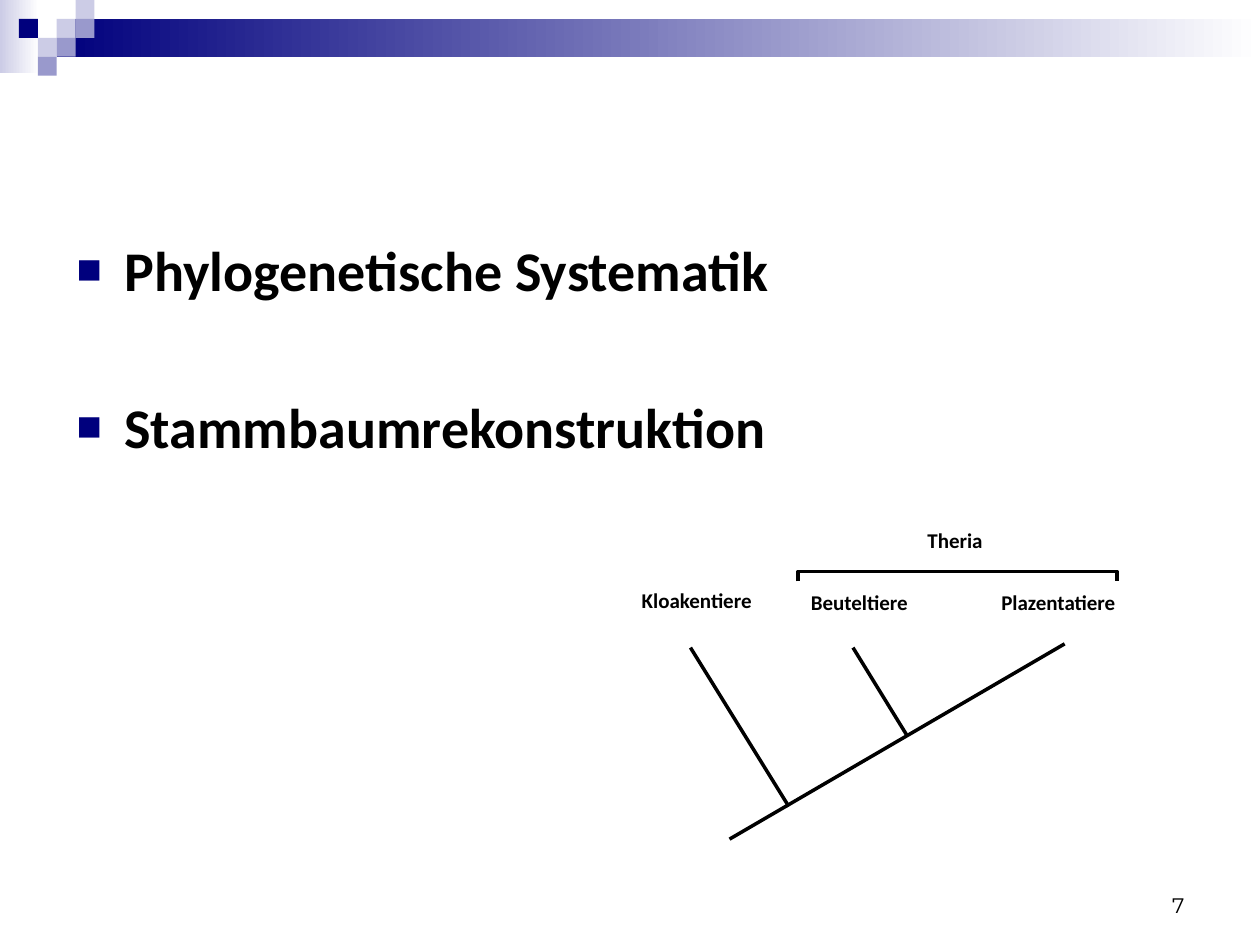
from dataclasses import dataclass

from lxml.etree import SubElement
from pptx import Presentation
from pptx.dml.color import RGBColor as Rgb
from pptx.enum.shapes import MSO_CONNECTOR as Conn, MSO_SHAPE as Shape
from pptx.enum.text import MSO_ANCHOR as Anchor, PP_ALIGN as Align
from pptx.oxml.ns import qn
from pptx.util import Inches, Pt


@dataclass(frozen=True)
class Theme:
    navy: Rgb = Rgb.from_string("00007D")
    mid: Rgb = Rgb.from_string("9999CC")
    pale: Rgb = Rgb.from_string("CCCCE6")
    white: Rgb = Rgb.from_string("FFFFFF")
    black: Rgb = Rgb.from_string("000000")
    font: str = "Calibri"
    num_font: str = "Montserrat"
    head: int = 32
    small: int = 12
    line: int = 2


THEME = Theme()
TILE = 0.15


def add_rect(slide, box, color, fade=False):
    """Add a borderless rectangle, solid or fading to white on the right."""
    rect = slide.shapes.add_shape(Shape.RECTANGLE, *map(Inches, box))
    rect.shadow.inherit = False
    rect.line.fill.background()
    if fade:
        rect.fill.gradient()
        rect.fill.gradient_angle = 0
        for stop, tone, place in zip(rect.fill.gradient_stops,
                                     (color, THEME.white), (0, 1)):
            stop.color.rgb = tone
            stop.position = place
    else:
        rect.fill.solid()
        rect.fill.fore_color.rgb = color


def add_banner(slide):
    add_rect(slide, (0, 0, 0.31, 0.58), THEME.pale, fade=True)
    add_rect(slide, (0.45, 0.15, 9.55, 0.3), THEME.navy, fade=True)
    tiles = [(3, 1, THEME.pale), (4, 0, THEME.pale), (4, 1, THEME.mid),
             (2, 2, THEME.pale), (1, 1, THEME.navy), (3, 2, THEME.mid),
             (2, 3, THEME.mid)]
    for col, row, color in tiles:
        add_rect(slide, (col * TILE, row * TILE, TILE, TILE), color)


def style(para, size, font=THEME.font, bold=True):
    for run in para.runs:
        run.font.name = font
        run.font.size = Pt(size)
        run.font.bold = bold
        run.font.color.rgb = THEME.black


def add_frame(slide, box):
    frame = slide.shapes.add_textbox(*map(Inches, box)).text_frame
    frame.word_wrap = True
    return frame


def add_bullet(para):
    props = para._p.get_or_add_pPr()
    props.set("marL", str(Inches(0.38)))
    props.set("indent", str(-Inches(0.38)))
    color = SubElement(props, qn("a:buClr"))
    SubElement(color, qn("a:srgbClr"), val=str(THEME.navy))
    SubElement(props, qn("a:buSzPct"), val="75000")
    SubElement(props, qn("a:buFont"), typeface="Arial")
    SubElement(props, qn("a:buChar"), char="■")


def add_topics(slide, topics):
    frame = add_frame(slide, (0.51, 1.31, 7.09, 2.99))
    frame.margin_top = Inches(0.56)
    frame.text = "\n".join(topics)
    for i, para in enumerate(frame.paragraphs):
        para.space_before = Pt(51 if i else 0)
        add_bullet(para)
        style(para, THEME.head)


def add_label(slide, text, left, top, height=0.62):
    frame = add_frame(slide, (left, top, 1.54, height))
    frame.text = text
    para = frame.paragraphs[0]
    para.alignment = Align.CENTER
    para.space_after = Pt(10)
    style(para, THEME.small)


def add_branch(slide, ends):
    branch = slide.shapes.add_connector(Conn.STRAIGHT, *map(Inches, ends))
    branch.line.color.rgb = THEME.black
    branch.line.width = Pt(THEME.line)
    SubElement(branch._element.spPr, qn("a:effectLst"))


def add_bracket(slide, box):
    """Add a square bracket turned to open downwards."""
    mark = slide.shapes.add_shape(Shape.LEFT_BRACKET, *map(Inches, box))
    mark.adjustments[0] = 0
    mark.rotation = 90
    mark.shadow.inherit = False
    mark.fill.background()
    mark.line.color.rgb = THEME.black
    mark.line.width = Pt(THEME.line)


def add_tree(slide):
    for ends in ((5.79, 6.66, 8.45, 5.11),
                 (6.77, 5.14, 7.2, 5.84),
                 (5.48, 5.14, 6.26, 6.4)):
        add_branch(slide, ends)
    for text, left, top in (("Kloakentiere", 4.76, 4.61),
                            ("Beuteltiere", 6.05, 4.63),
                            ("Plazentatiere", 7.63, 4.63)):
        add_label(slide, text, left, top)
    add_bracket(slide, (7.56, 3.31, 0.08, 2.53))
    add_label(slide, "Theria", 6.81, 4.14, 0.38)


def add_number(slide, text):
    frame = add_frame(slide, (7.17, 6.83, 2.33, 0.5))
    frame.vertical_anchor = Anchor.BOTTOM
    frame.text = text
    para = frame.paragraphs[0]
    para.alignment = Align.RIGHT
    style(para, THEME.small, THEME.num_font, bold=False)


def main():
    deck = Presentation()
    deck.slide_width, deck.slide_height = Inches(10), Inches(7.5)
    slide = deck.slides.add_slide(deck.slide_layouts[6])
    add_banner(slide)
    add_topics(slide, ["Phylogenetische Systematik",
                       "Stammbaumrekonstruktion"])
    add_number(slide, "7")
    add_tree(slide)
    deck.save("out.pptx")


if __name__ == "__main__":
    main()
